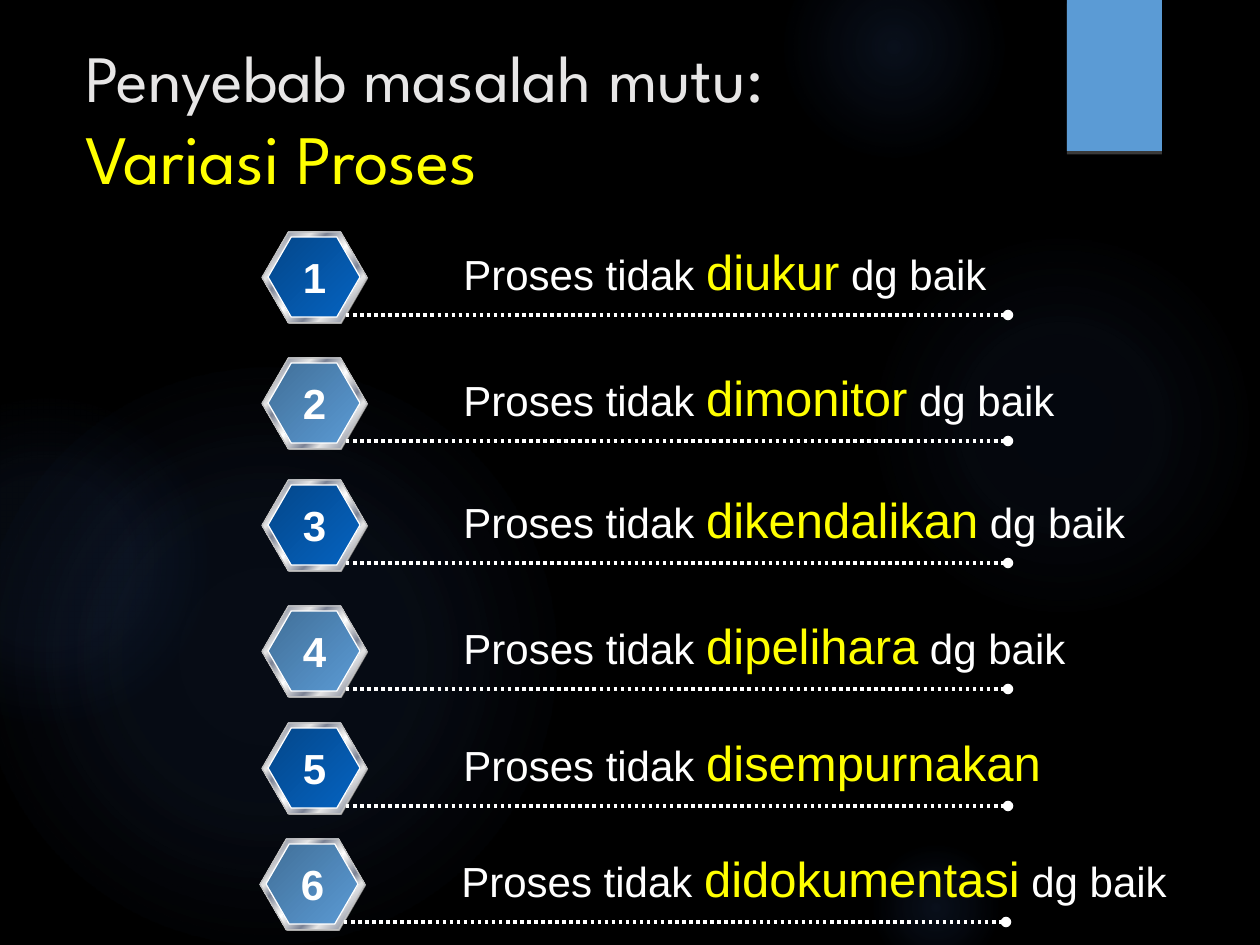
"""Build the slide on process variation as a cause of quality problems."""
from typing import NamedTuple, Optional

from lxml import etree
from pptx import Presentation
from pptx import util as u
from pptx.dml import color
from pptx.enum import dml, shapes, text
from pptx.oxml import ns

PX = u.Inches(1) / 126
FONT = "Arial"
COLOURS = {
    "black": "000000", "white": "FFFFFF", "yellow": "FFFF00", "pale": "E7E6E6",
    "glow": "4472C4", "tab": "5B9BD5", "grey": "808080", "rim": "C0C0C0",
    "steel": "7D8496", "silver": "E6E6E6",
    "navy": "04478A", "blue": "0563C1", "slate": "416F98", "sky": "5B9BD5",
}


class Box(NamedTuple):
    left: int
    top: int
    width: int
    height: int


class Stop(NamedTuple):
    position: int
    colour: str
    opacity: int = 100


class Glow(NamedTuple):
    left: int
    top: int
    size: int
    opacities: tuple[int, int]
    edge: int


class Cause(NamedTuple):
    left: int
    top: int
    text_width: int
    keyword: str
    ending: str = " dg baik"


class Part(NamedTuple):
    wording: str
    size: float
    colour: str


GLOWS = (
    Glow(868, 231, 388, (7, 6), 69),
    Glow(784, -63, 220, (14, 7), 73),
    Glow(868, 840, 136, (14, 7), 66),
    Glow(-21, 368, 577, (11, 10), 75),
    Glow(-116, 399, 325, (8, 8), 72),
)
CAUSES = (
    Cause(262, 232, 554, "diukur"),
    Cause(262, 358, 624, "dimonitor"),
    Cause(262, 480, 696, "dikendalikan"),
    Cause(262, 606, 635, "dipelihara"),
    Cause(262, 723, 610, "disempurnakan", ""),
    Cause(260, 839, 740, "didokumentasi"),
)
METAL = tuple(
    Stop(position, name) for position, name in (
        (0, "silver"), (8, "steel"), (26, "silver"), (34, "steel"),
        (46, "silver"), (50, "white"), (54, "silver"), (66, "steel"),
        (74, "silver"), (92, "steel"), (100, "silver"))
)
FACES = (
    (Stop(0, "navy"), Stop(100, "blue")),
    (Stop(0, "slate"), Stop(100, "sky")),
)


def px(length: int) -> int:
    return round(length * PX)


def rgb(name: str) -> color.RGBColor:
    return color.RGBColor.from_string(COLOURS[name])


def add_element(parent, tag: str, **attributes):
    values = {key: str(value) for key, value in attributes.items()}
    return etree.SubElement(parent, ns.qn(tag), values)


def add_colour(parent, name: str, opacity: int) -> None:
    element = add_element(parent, "a:srgbClr", val=COLOURS[name])
    if opacity < 100:
        add_element(element, "a:alpha", val=opacity * 1000)


def fill_gradient(shape, stops: tuple[Stop, ...], radial: bool = False) -> None:
    shape.fill.background()
    properties = shape.element.spPr
    gradient = etree.Element(ns.qn("a:gradFill"), {"rotWithShape": "1"})
    stop_list = add_element(gradient, "a:gsLst")
    for stop in stops:
        element = add_element(stop_list, "a:gs", pos=stop.position * 1000)
        add_colour(element, stop.colour, stop.opacity)
    if radial:
        centre = add_element(gradient, "a:path", path="circle")
        add_element(centre, "a:fillToRect", l=50000, t=50000, r=50000, b=50000)
    else:
        add_element(gradient, "a:lin", ang=45 * 60000, scaled=0)
    properties.replace(properties.find(ns.qn("a:noFill")), gradient)


def add_preset(parent, preset, box: Box, fill: Optional[str] = None,
               line: Optional[str] = None):
    shape = parent.shapes.add_shape(preset, *map(px, box))
    shape.shadow.inherit = False
    if fill:
        shape.fill.solid()
        shape.fill.fore_color.rgb = rgb(fill)
    if line:
        shape.line.color.rgb = rgb(line)
        shape.line.width = u.Pt(0.75)
    else:
        shape.line.fill.background()
    return shape


def add_glow(slide, glow: Glow) -> None:
    box = Box(glow.left, glow.top, glow.size, glow.size)
    shape = add_preset(slide, shapes.MSO_SHAPE.OVAL, box)
    inner, middle = glow.opacities
    fill_gradient(shape, (Stop(0, "glow", inner), Stop(36, "glow", middle),
                          Stop(glow.edge, "glow", 0)), radial=True)


def add_tab(slide) -> None:
    shape = add_preset(slide, shapes.MSO_SHAPE.RECTANGLE, Box(1067, 0, 95, 151), "tab")
    effects = shape.element.spPr.find(ns.qn("a:effectLst"))
    shadow = add_element(effects, "a:outerShdw", blurRad=0, dist=u.Pt(2),
                         dir=90 * 60000, algn="t", rotWithShape=0)
    add_colour(shadow, "grey", 45)


def add_text(slide, box: Box, font: str):
    shape = slide.shapes.add_textbox(*map(px, box))
    paragraph = shape.text_frame.paragraphs[0]
    paragraph.font.name = font
    return shape.text_frame, paragraph


def add_part(paragraph, part: Part) -> None:
    run = paragraph.add_run()
    run.text = part.wording
    run.font.size = u.Pt(part.size)
    run.font.color.rgb = rgb(part.colour)


def add_title(slide) -> None:
    frame, paragraph = add_text(slide, Box(73, 30, 914, 78), "League Spartan")
    frame.word_wrap = True
    add_part(paragraph, Part("Penyebab masalah mutu:", 37.8, "pale"))
    paragraph.add_line_break()
    add_part(paragraph, Part("Variasi Proses", 39.6, "yellow"))


def add_badge(slide, left: int, top: int, face: tuple[Stop, ...]) -> None:
    group = slide.shapes.add_group_shape()
    layers = (
        (Box(left + 1, top + 1, 105, 91), "grey", None, None),
        (Box(left, top, 105, 91), None, "rim", METAL),
        (Box(left + 6, top + 5, 92, 80), None, "white", face),
    )
    for box, fill, line, stops in layers:
        shape = add_preset(group, shapes.MSO_SHAPE.HEXAGON, box, fill, line)
        shape.adjustments[0] = 0.29
        if stops:
            fill_gradient(shape, stops)


def add_leader(slide, left: int, top: int) -> None:
    connector = slide.shapes.add_connector(
        shapes.MSO_CONNECTOR.STRAIGHT, *map(px, (left, top, left + 662, top)))
    connector.line.color.rgb = rgb("white")
    connector.line.width = u.Pt(2)
    connector.line.dash_style = dml.MSO_LINE.ROUND_DOT
    add_element(connector.line._get_or_add_ln(), "a:tailEnd", type="oval")
    add_element(connector.element.spPr, "a:effectLst")


def add_cause(slide, number: int, cause: Cause) -> None:
    left, top = cause.left, cause.top
    add_badge(slide, left, top, FACES[(number - 1) % 2])
    add_leader(slide, left + 84, top + 83)
    frame, paragraph = add_text(slide, Box(left + 189, top + 3, cause.text_width, 72), FONT)
    frame.word_wrap = False
    frame.auto_size = text.MSO_AUTO_SIZE.SHAPE_TO_FIT_TEXT
    add_part(paragraph, Part("Proses tidak ", 24, "white"))
    add_part(paragraph, Part(cause.keyword, 28, "yellow"))
    if cause.ending:
        add_part(paragraph, Part(cause.ending, 24, "white"))
    frame, paragraph = add_text(slide, Box(left + 28, top + 13, 49, 63), FONT)
    frame.word_wrap = False
    frame.auto_size = text.MSO_AUTO_SIZE.SHAPE_TO_FIT_TEXT
    paragraph.alignment = text.PP_ALIGN.CENTER
    paragraph.font.bold = True
    add_part(paragraph, Part(str(number), 24, "white"))


def main() -> None:
    presentation = Presentation()
    presentation.slide_width, presentation.slide_height = px(1260), px(945)
    slide = presentation.slides.add_slide(presentation.slide_layouts[6])
    slide.background.fill.solid()
    slide.background.fill.fore_color.rgb = rgb("black")
    for glow in GLOWS:
        add_glow(slide, glow)
    add_tab(slide)
    add_title(slide)
    for number, cause in enumerate(CAUSES, start=1):
        add_cause(slide, number, cause)
    presentation.save("out.pptx")


if __name__ == "__main__":
    main()
